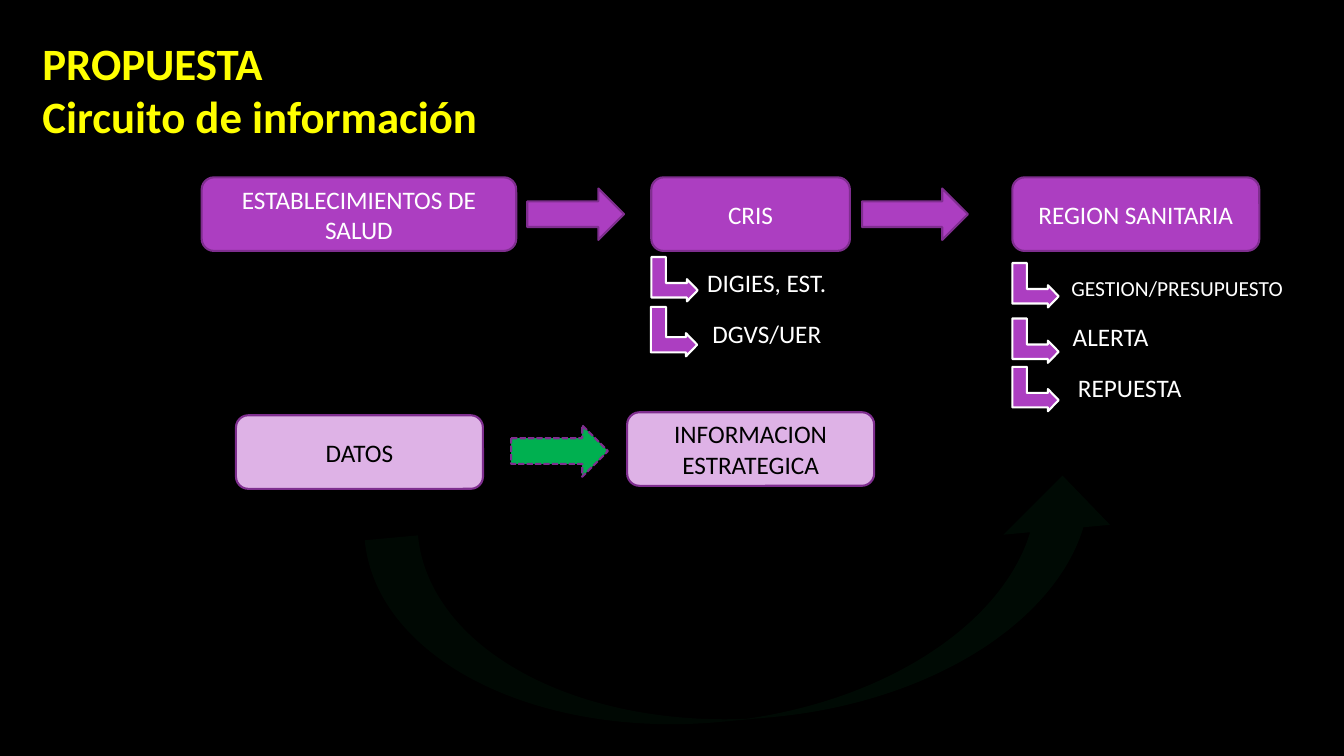
from lxml import etree
from pptx import Presentation
from pptx.dml.color import RGBColor
from pptx.enum import dml, shapes, text
from pptx.oxml import ns
from pptx.util import Inches, Pt

COLORS = {"black": "000000", "white": "FFFFFF", "yellow": "FFFF00", "purple": "AC3EC1",
          "lilac": "DEB2E6", "plum": "7F2E8F", "green": "00B050"}
KINDS = shapes.MSO_SHAPE
ROW_TOP = 1.76


def color(name):
    return RGBColor.from_string(COLORS[name])


def write(box, *lines, size=18, ink="white", bold=False, align="CENTER",
          anchor="MIDDLE", spacing=1.0, wrap=True):
    frame = box.text_frame
    frame.word_wrap = wrap
    frame.vertical_anchor = text.MSO_ANCHOR[anchor]
    for index, line in enumerate(lines):
        para = frame.add_paragraph() if index else frame.paragraphs[0]
        para.alignment = text.PP_ALIGN[align]
        para.line_spacing = spacing
        span = para.add_run()
        span.text = line
        span.font.name = "Calibri"
        span.font.size = Pt(size)
        span.font.bold = bold
        span.font.color.rgb = color(ink)


def add_figure(page, kind, left, top, width, height, fill="purple", line="plum"):
    figure = page.shapes.add_shape(kind, Inches(left), Inches(top), Inches(width), Inches(height))
    figure.shadow.inherit = False
    figure.fill.solid()
    figure.fill.fore_color.rgb = color(fill)
    if line:
        figure.line.color.rgb = color(line)
        figure.line.width = Pt(1.5)
    else:
        figure.line.fill.background()
    return figure


def add_stage(page, words, left, top, width, fill="purple", ink="white"):
    stage = add_figure(page, KINDS.ROUNDED_RECTANGLE, left, top, width, 0.73, fill)
    write(stage, words, ink=ink)


def add_branch(page, left, top, width=0.44):
    branch = add_figure(page, KINDS.BENT_UP_ARROW, left, top, width, 0.46, line="white")
    branch.rotation = 90
    for index, value in enumerate((0.328, 0.25, 0.243)):
        branch.adjustments[index] = value


def add_label(page, words, left, top, **style):
    label = page.shapes.add_textbox(Inches(left), Inches(top), Inches(2.35), Inches(0.39))
    write(label, words, anchor="BOTTOM", **{"spacing": 0.9, **style})


def add_return_arrow(page):
    """Draw the almost transparent arrow that leads back to the data."""
    arrow = add_figure(page, KINDS.CURVED_UP_ARROW, 3.7, 5.01, 7.48, 2.12, "green", None)
    arrow.rotation = 354.7
    tint = arrow.fill._xPr.find(".//" + ns.qn("a:srgbClr"))
    etree.SubElement(tint, ns.qn("a:alpha"), val="6000")


def add_title(page):
    title = page.shapes.title
    title.left, title.top = Inches(0.32), Inches(0.3)
    title.width, title.height = Inches(4.56), Inches(1.18)
    write(title, "PROPUESTA", "Circuito de información", size=32, ink="yellow",
          bold=True, align="LEFT", anchor="TOP", wrap=False)
    title.text_frame.auto_size = text.MSO_AUTO_SIZE.SHAPE_TO_FIT_TEXT


def main():
    deck = Presentation()
    deck.slide_width, deck.slide_height = Inches(13.33), Inches(7.5)
    page = deck.slides.add_slide(deck.slide_layouts.get_by_name("Title Only"))
    page.background.fill.solid()
    page.background.fill.fore_color.rgb = color("black")
    add_title(page)

    for words, left, width in (("ESTABLECIMIENTOS DE SALUD", 2, 3.12), ("CRIS", 6.46, 1.97),
                               ("REGION SANITARIA", 10.04, 2.45)):
        add_stage(page, words, left, ROW_TOP, width)
    for left, width in ((5.23, 0.96), (8.55, 1.05)):
        add_figure(page, KINDS.RIGHT_ARROW, left, 1.87, width, 0.51)

    for left, top, width in ((6.47, 2.54, 0.44), (6.44, 3.06, 0.49), (10.05, 2.6, 0.44),
                             (10.05, 3.15, 0.44), (10.05, 3.63, 0.44)):
        add_branch(page, left, top, width)
    add_label(page, "DIGIES, EST.", 6.43, 2.61)
    add_label(page, "DGVS/UER", 6.43, 3.12)
    add_label(page, "GESTION/PRESUPUESTO", 10.5, 2.64, size=15.3, spacing=0.8)
    add_label(page, "ALERTA", 9.84, 3.15)
    add_label(page, "REPUESTA", 10.03, 3.66)

    add_stage(page, "DATOS", 2.34, 4.12, 2.45, "lilac", "black")
    add_stage(page, "INFORMACION ESTRATEGICA", 6.22, 4.09, 2.45, "lilac", "black")
    link = add_figure(page, KINDS.RIGHT_ARROW, 5.07, 4.22, 0.96, 0.51, "green")
    link.line.dash_style = dml.MSO_LINE.SQUARE_DOT
    add_return_arrow(page)
    deck.save("out.pptx")


if __name__ == "__main__":
    main()
